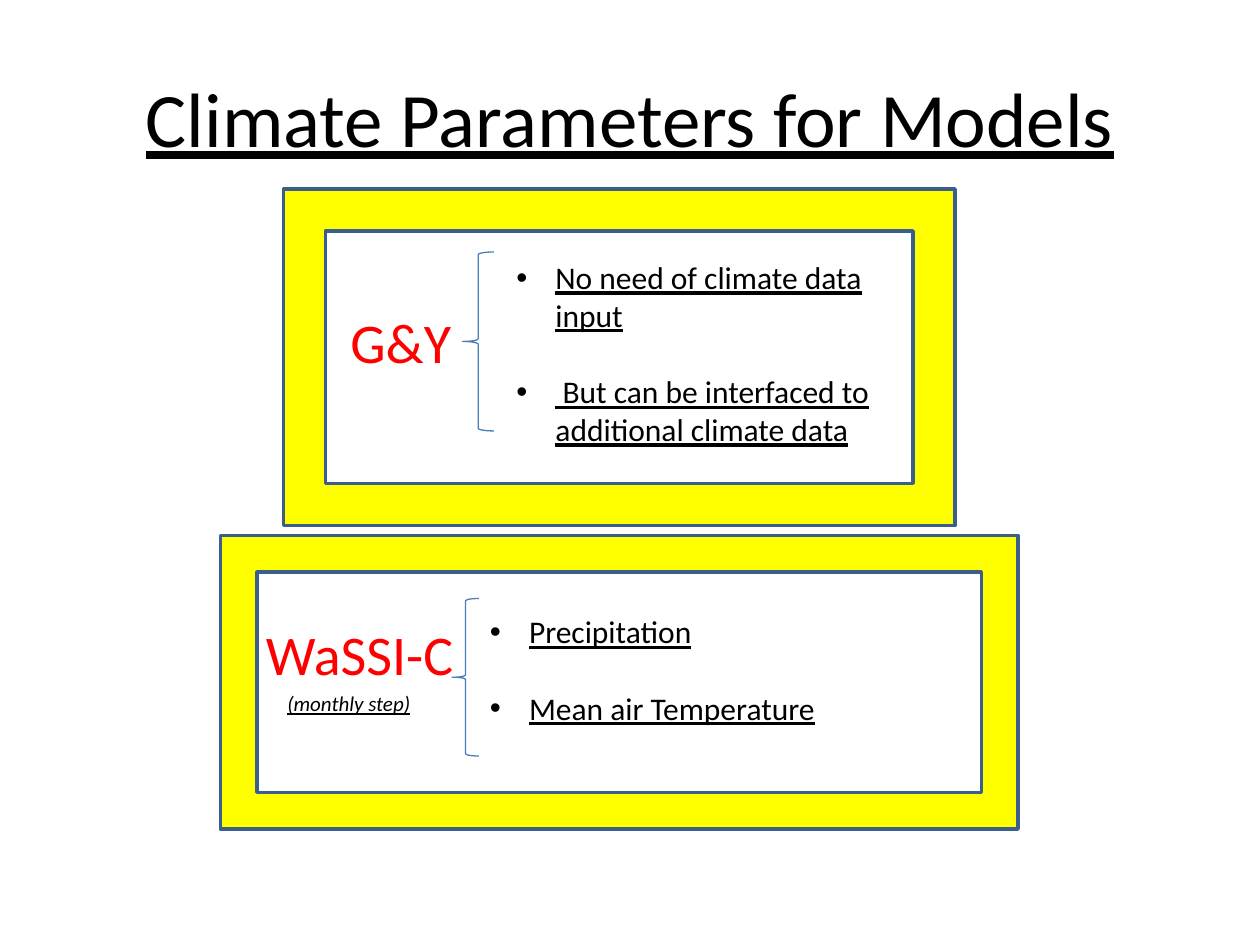
from pptx import Presentation
from pptx.dml.color import RGBColor
from pptx.enum.shapes import MSO_SHAPE as Shape
from pptx.enum.text import MSO_AUTO_SIZE as AutoSize
from pptx.util import Inches, Pt
from lxml.etree import SubElement
from pptx.oxml.ns import qn

COLORS = {"text": "000000", "model": "FF0000", "frame": "FFFF00",
          "frame_line": "3A5F8C", "brace": "4B7EBC"}


def style(para, size, color, underline=False, italic=False):
    for span in para.runs:
        span.font.name = "Calibri"
        span.font.size = Pt(size)
        span.font.color.rgb = RGBColor.from_string(COLORS[color])
        span.font.underline = underline
        span.font.italic = italic


def set_bullet(para, left, hanging, char=None):
    props = para._p.get_or_add_pPr()
    props.set("marL", str(Inches(left)))
    props.set("indent", str(-Inches(hanging)))
    if char:
        SubElement(props, qn("a:buFont"), typeface="Arial")
        SubElement(props, qn("a:buChar"), char=char)
    else:
        SubElement(props, qn("a:buNone"))


deck = Presentation()
deck.slide_width, deck.slide_height = Inches(10), Inches(7.5)
page = deck.slides.add_slide(deck.slide_layouts[1])

title = page.shapes.title
title.left, title.top = Inches(0.5), Inches(0.3)
title.width, title.height = Inches(9), Inches(1.25)
title.text_frame.text = "Climate Parameters for Models"
style(title.text_frame.paragraphs[0], 44, "text", underline=True)

body = page.placeholders[1]
body.left, body.top = Inches(0.5), Inches(1.75)
body.width, body.height = Inches(9), Inches(4.95)
frame = body.text_frame
frame.auto_size = AutoSize.NONE
frame.margin_top = Inches(0.69)
frame.text = "G&Y\nWaSSI-C\n(monthly step)"
for para, left, before in zip(frame.paragraphs, (2.18, 1.51, 1.68), (0, 140, 2)):
    para.space_before = Pt(before)
    set_bullet(para, left, 0)
    style(para, 32, "model")
style(frame.paragraphs[2], 12, "text", underline=True, italic=True)

models = [
    {"brace": (3.67, 2, 0.25, 1.42), "list": (4, 2, 3.42, 1.92),
     "frame": (2.25, 1.5, 5.33, 2.67), "inset": 0.05,
     "items": ["No need of climate data input",
               " But can be interfaced to additional climate data"]},
    {"brace": (3.59, 4.75, 0.21, 1.25), "list": (3.79, 4.5, 3.38, 2.22),
     "frame": (1.75, 4.25, 6.33, 2.33), "inset": 0.36,
     "items": ["Precipitation", "Mean air Temperature"]},
]

for model in models:
    brace = page.shapes.add_shape(Shape.LEFT_BRACE, *map(Inches, model["brace"]))
    brace.shadow.inherit = False
    brace.fill.background()
    brace.line.color.rgb = RGBColor.from_string(COLORS["brace"])
    brace.line.width = Pt(0.75)

    box = page.shapes.add_textbox(*map(Inches, model["list"]))
    box.text_frame.word_wrap = True
    box.text_frame.margin_top = Inches(model["inset"])
    box.text_frame.text = "\n".join(model["items"])
    for index, para in enumerate(box.text_frame.paragraphs):
        para.space_before = Pt(22 * index)
        set_bullet(para, 0.31, 0.31, "•")
        style(para, 18, "text", underline=True)

    border = page.shapes.add_shape(Shape.FRAME, *map(Inches, model["frame"]))
    border.shadow.inherit = False
    border.fill.solid()
    border.fill.fore_color.rgb = RGBColor.from_string(COLORS["frame"])
    border.line.color.rgb = RGBColor.from_string(COLORS["frame_line"])
    border.line.width = Pt(2)

deck.save("out.pptx")
